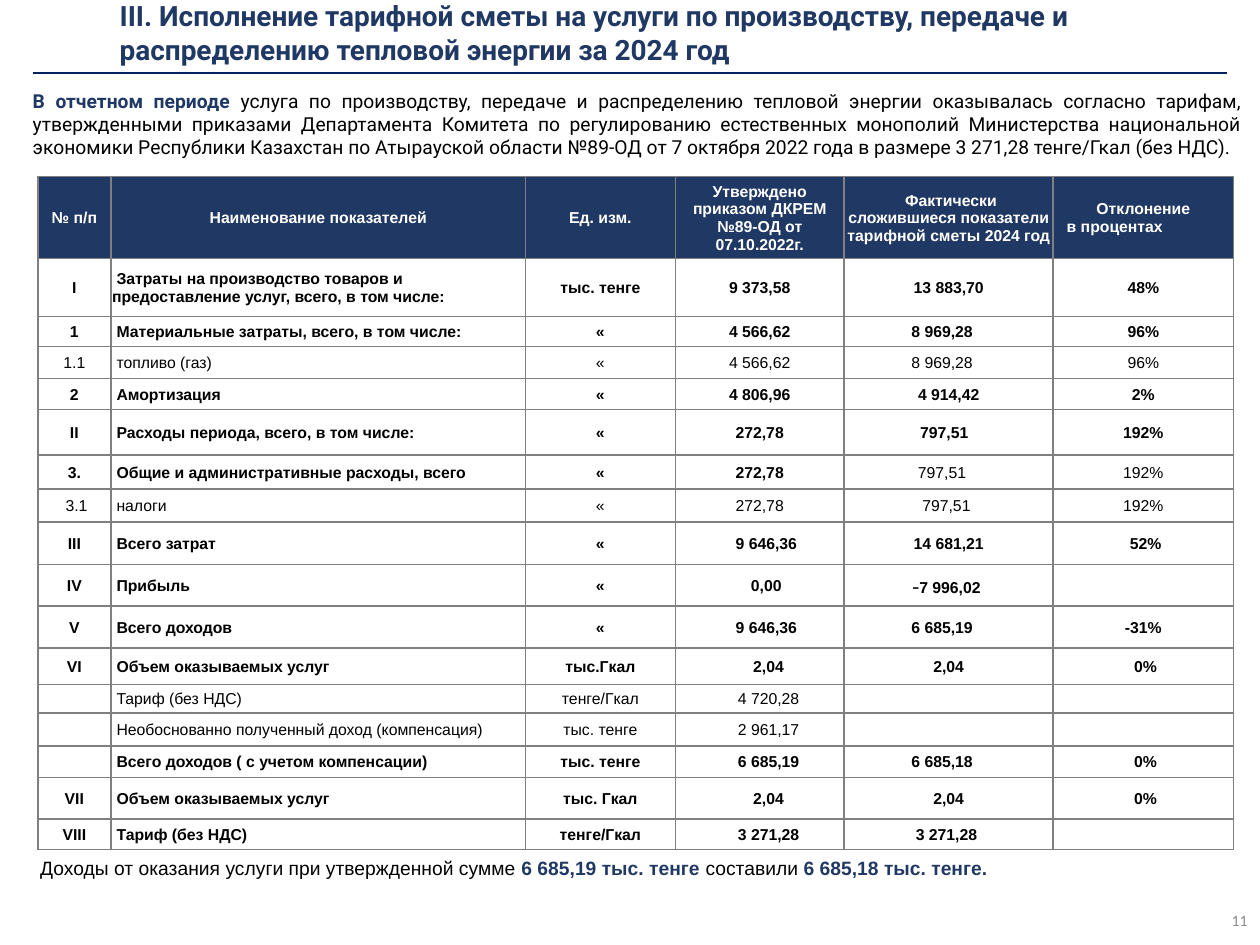
from dataclasses import dataclass
from typing import NamedTuple

from lxml import etree
from pptx import Presentation, util as u
from pptx.dml.color import RGBColor
from pptx.enum import shapes, text
from pptx.oxml import ns


@dataclass(frozen=True)
class Theme:
    navy: str = "203864"
    rule: str = "002060"
    grid: str = "808080"
    black: str = "000000"
    white: str = "FFFFFF"
    number: str = "8C8C8C"
    heading_font: str = "Roboto"
    table_font: str = "Arial"
    title_size: int = 16
    text_size: int = 11
    small_size: int = 9
    minus_size: int = 12


class Shifted(NamedTuple):
    """Centred text moved right (or left if negative) by half-steps."""
    value: str
    steps: int


THEME = Theme()
WIDTH, HEIGHT = 10, 7.5
STEP = 0.035
COLUMNS = (0.58, 3.29, 1.19, 1.34, 1.66, 1.43)
NAME, ACTUAL, DEVIATION = 1, 4, 5
S = Shifted
HEADER = (
    "№ п/п", "Наименование показателей", "Ед. изм.",
    "Утверждено приказом ДКРЕМ №89-ОД от 07.10.2022г.",
    "Фактически сложившиеся показатели тарифной сметы 2024 год",
    "Отклонение",
)
# Row height, number of leading bold columns, cell values
ROWS = (
    (0.46, 6, ("I", "Затраты на производство товаров и предоставление услуг, всего, в том числе:",
               "тыс. тенге", "9 373,58", "13 883,70", "48%")),
    (0.24, 6, ("1", "Материальные затраты, всего, в том числе:", "«", "4 566,62", S("8 969,28", -3), "96%")),
    (0.25, 0, ("1.1", "топливо (газ)", "«", "4 566,62", S("8 969,28", -3), "96%")),
    (0.25, 6, ("2", "Амортизация", "«", "4 806,96", "4 914,42", "2%")),
    (0.36, 6, ("II", "Расходы периода, всего, в том числе:", "«", "272,78", S("797,51", -2), "192%")),
    (0.27, 4, ("3.", "Общие и административные расходы, всего", "«", "272,78", S("797,51", -3), "192%")),
    (0.26, 0, (S("3.1", 1), "налоги", "«", "272,78", S("797,51", -1), "192%")),
    (0.34, 6, ("III", "Всего затрат", "«", S("9 646,36", 3), "14 681,21", S("52%", 1))),
    (0.33, 6, ("IV", "Прибыль", "«", S("0,00", 3), S("-7 996,02", -1), "")),
    (0.33, 6, ("V", "Всего доходов", "«", S("9 646,36", 3), S("6 685,19", -3), "-31%")),
    (0.29, 6, ("VI", "Объем оказываемых услуг", "тыс.Гкал", S("2,04", 4), "2,04", S("0%", 1))),
    (0.23, 0, ("", "Тариф (без НДС)", "тенге/Гкал", S("4 720,28", 4), "", "")),
    (0.26, 0, ("", "Необоснованно полученный доход (компенсация)", "тыс. тенге", S("2 961,17", 4), "", "")),
    (0.25, 6, ("", "Всего доходов ( с учетом компенсации)", "тыс. тенге",
               S("6 685,19", 4), S("6 685,18", -3), S("0%", 1))),
    (0.33, 6, ("VII", "Объем оказываемых услуг", "тыс. Гкал", S("2,04", 4), "2,04", S("0%", 1))),
    (0.24, 6, ("VIII", "Тариф (без НДС)", "тенге/Гкал", S("3 271,28", 4), S("3 271,28", -1), "")),
)


def apply(target, values):
    for name, value in values.items():
        setattr(target, name, value)


def add_run(paragraph, value, size, font, color, bold=False):
    run = paragraph.add_run()
    run.text = value
    apply(run.font, {"size": u.Pt(size), "name": font, "bold": bold})
    run.font.color.rgb = RGBColor.from_string(color)


def place(shape, left, top, width, height):
    """Positions are shares of the slide's width and height."""
    apply(shape, {"left": u.Inches(left * WIDTH), "top": u.Inches(top * HEIGHT),
                  "width": u.Inches(width * WIDTH), "height": u.Inches(height * HEIGHT)})


def fill_text(shape, box, runs, alignment, anchor=text.MSO_ANCHOR.TOP):
    place(shape, *box)
    frame = shape.text_frame
    apply(frame, {"word_wrap": True, "auto_size": text.MSO_AUTO_SIZE.NONE,
                  "vertical_anchor": anchor})
    paragraph = frame.paragraphs[0]
    properties = paragraph._p.get_or_add_pPr()
    apply(paragraph, {"alignment": alignment, "space_before": u.Pt(0), "line_spacing": 1.0})
    apply_indent(properties, marL=0, indent=0)
    etree.SubElement(properties, ns.qn("a:buNone"))
    for run in runs:
        add_run(paragraph, *run)


def apply_indent(properties, **inches):
    for name, value in inches.items():
        properties.set(name, str(u.Inches(value)))


def add_textbox(slide, *args):
    fill_text(slide.shapes.add_textbox(0, 0, 0, 0), *args)


def add_rule(slide, left, right, top):
    line = slide.shapes.add_connector(
        shapes.MSO_CONNECTOR.STRAIGHT, u.Inches(left * WIDTH), u.Inches(top * HEIGHT),
        u.Inches(right * WIDTH), u.Inches(top * HEIGHT))
    line.line.color.rgb = RGBColor.from_string(THEME.rule)
    line.line.width = u.Pt(1)
    etree.SubElement(line._element.spPr, ns.qn("a:effectLst"))


def draw_borders(cell):
    properties = cell._tc.get_or_add_tcPr()
    for position, side in enumerate(("lnL", "lnR", "lnT", "lnB")):
        border = etree.Element(ns.qn(f"a:{side}"), w=str(u.Pt(1)))
        fill = etree.SubElement(border, ns.qn("a:solidFill"))
        etree.SubElement(fill, ns.qn("a:srgbClr"), val=THEME.grid)
        properties.insert(position, border)


def write_value(paragraph, value, color, bold, centred=True):
    value, steps = value if isinstance(value, Shifted) else (value, 0)
    paragraph.alignment = text.PP_ALIGN.CENTER if centred else text.PP_ALIGN.LEFT
    if steps:
        side = "marL" if steps > 0 else "marR"
        apply_indent(paragraph._p.get_or_add_pPr(), **{side: abs(steps) * STEP})
    if value == "-7 996,02":
        add_run(paragraph, "-", THEME.minus_size, "Times New Roman", color)
        value = value[1:]
    if value:
        add_run(paragraph, value, THEME.small_size, THEME.table_font, color, bold)
    else:
        etree.SubElement(paragraph._p, ns.qn("a:endParaRPr"), sz=str(THEME.small_size * 100))


def format_cell(cell, fill=None):
    inset = u.Inches(0.01)
    apply(cell, {"margin_left": inset, "margin_right": inset, "margin_top": inset,
                 "margin_bottom": 0, "vertical_anchor": text.MSO_ANCHOR.MIDDLE})
    if fill:
        cell.fill.solid()
        cell.fill.fore_color.rgb = RGBColor.from_string(fill)
    else:
        cell.fill.background()
    draw_borders(cell)


def add_estimate_table(slide, left, top):
    rows = ((0.65, len(COLUMNS), HEADER), *ROWS)
    frame = slide.shapes.add_table(
        len(rows), len(COLUMNS), u.Inches(left * WIDTH), u.Inches(top * HEIGHT),
        u.Inches(sum(COLUMNS)), u.Inches(sum(row[0] for row in rows)))
    table = frame.table
    apply(table, {"first_row": False, "horz_banding": False})
    for column, width in zip(table.columns, COLUMNS):
        column.width = u.Inches(width)
    for row_index, (height, bold_count, values) in enumerate(rows):
        table.rows[row_index].height = u.Inches(height)
        is_header = row_index == 0
        color = THEME.white if is_header else THEME.black
        for column_index, value in enumerate(values):
            cell = table.cell(row_index, column_index)
            format_cell(cell, THEME.navy if is_header else None)
            paragraph = cell.text_frame.paragraphs[0]
            write_value(paragraph, value, color, column_index < bold_count,
                        is_header or column_index != NAME)
            if column_index == (ACTUAL if is_header else NAME):
                apply_indent(paragraph._p.get_or_add_pPr(), marL=0, indent=STEP)
    write_value(table.cell(0, DEVIATION).text_frame.add_paragraph(),
                Shifted("в процентах", -13), THEME.white, True)


def main():
    presentation = Presentation()
    apply(presentation, {"slide_width": u.Inches(WIDTH), "slide_height": u.Inches(HEIGHT)})
    slide = presentation.slides.add_slide(presentation.slide_layouts[1])
    title, body = slide.placeholders
    align, middle = text.PP_ALIGN, text.MSO_ANCHOR.MIDDLE
    heading = (THEME.text_size, THEME.heading_font)
    note = (THEME.text_size, THEME.table_font)

    fill_text(title, (0.085, -0.004, 0.893, 0.076), [
        ("III. Исполнение тарифной сметы на услуги по производству, передаче и распределению "
         "тепловой энергии за 2024 год", THEME.title_size, THEME.heading_font, THEME.navy, True),
    ], align.LEFT, middle)
    add_rule(slide, 0.026, 0.974, 0.077)
    fill_text(body, (0.016, 0.088, 0.98, 0.088), [
        ("В отчетном периоде ", *heading, THEME.navy, True),
        ("услуга по производству, передаче и распределению тепловой энергии оказывалась согласно "
         "тарифам, утвержденными приказами Департамента Комитета по регулированию естественных "
         "монополий Министерства национальной экономики Республики Казахстан по Атырауской области "
         "№89-ОД от 7 октября 2022 года в размере 3 271,28 тенге/Гкал (без НДС).",
         *heading, THEME.black),
    ], align.JUSTIFY)
    add_estimate_table(slide, 0.03, 0.187)
    add_textbox(slide, (0.022, 0.9, 0.948, 0.092), [
        ("Доходы от оказания услуги при утвержденной сумме ", *note, THEME.black),
        ("6 685,19 тыс. тенге ", *note, THEME.navy, True),
        ("составили ", *note, THEME.black),
        ("6 685,18 тыс. тенге.", *note, THEME.navy, True),
    ], align.JUSTIFY)
    add_textbox(slide, (0.775, 0.947, 0.225, 0.053), [
        ("11", THEME.small_size, "Calibri", THEME.number),
    ], align.RIGHT, middle)
    presentation.save("out.pptx")


if __name__ == "__main__":
    main()
